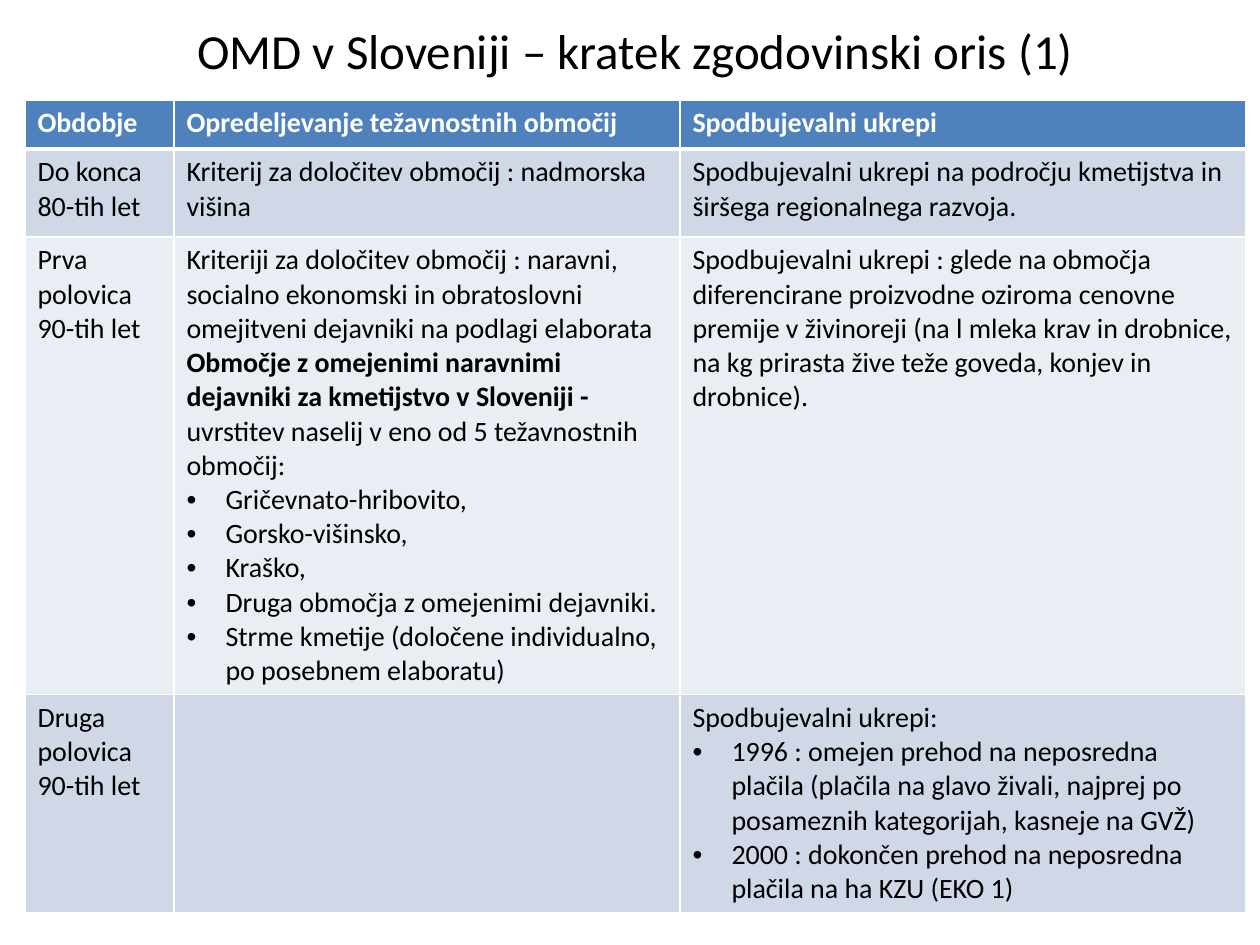
from dataclasses import dataclass

from lxml.etree import SubElement
from pptx import Presentation
from pptx.dml.color import RGBColor
from pptx.enum.text import MSO_ANCHOR, PP_ALIGN
from pptx.oxml import parse_xml
from pptx.oxml.ns import nsdecls, qn
from pptx.slide import Slide
from pptx.table import Table, _Cell
from pptx.util import Emu, Pt

PX_PER_INCH = 126
FONT = "Calibri"
BLACK = RGBColor(0x00, 0x00, 0x00)
WHITE = RGBColor(0xFF, 0xFF, 0xFF)
HEADER_BLUE = RGBColor(0x4F, 0x81, 0xBD)
BAND_DARK = RGBColor(0xD0, 0xD8, 0xE8)
BAND_LIGHT = RGBColor(0xE9, 0xED, 0xF4)

COLUMN_WIDTHS = (149, 506, 566)
BULLET_INDENT = 39


@dataclass(frozen=True)
class Span:
    text: str
    bold: bool = False


@dataclass(frozen=True)
class Para:
    spans: tuple[Span, ...]
    bullet: bool = False


@dataclass(frozen=True)
class Row:
    height: int
    fill: RGBColor
    cells: tuple[tuple[Para, ...], ...]
    color: RGBColor = BLACK
    top_border: int = 1
    bottom_border: int = 1


def px(length: int) -> Emu:
    return Emu(round(length * 914400 / PX_PER_INCH))


def plain(text: str, bold: bool = False) -> Para:
    return Para((Span(text, bold),))


def bullets(*texts: str) -> tuple[Para, ...]:
    return tuple(Para((Span(text),), bullet=True) for text in texts)


ROWS = (
    Row(
        49,
        HEADER_BLUE,
        tuple(
            (plain(heading, bold=True),)
            for heading in ("Obdobje", "Opredeljevanje težavnostnih območij", "Spodbujevalni ukrepi")
        ),
        color=WHITE,
        bottom_border=3,
    ),
    Row(
        88,
        BAND_DARK,
        (
            (plain("Do konca 80-tih let"),),
            (plain("Kriterij za določitev območij : nadmorska višina"),),
            (plain("Spodbujevalni ukrepi na področju kmetijstva in širšega regionalnega razvoja."),),
        ),
        top_border=3,
    ),
    Row(
        450,
        BAND_LIGHT,
        (
            (plain("Prva polovica 90-tih let"),),
            (
                Para((
                    Span("Kriteriji za določitev območij : naravni, socialno ekonomski in "
                         "obratoslovni omejitveni dejavniki na podlagi elaborata "),
                    Span("Območje z omejenimi naravnimi dejavniki za kmetijstvo v Sloveniji - ", bold=True),
                    Span("uvrstitev naselij v eno od 5 težavnostnih območij:"),
                )),
                *bullets(
                    "Gričevnato-hribovito,",
                    "Gorsko-višinsko,",
                    "Kraško,",
                    "Druga območja z omejenimi dejavniki.",
                    "Strme kmetije (določene individualno, po posebnem elaboratu)",
                ),
            ),
            (plain("Spodbujevalni ukrepi : glede na območja diferencirane proizvodne oziroma "
                   "cenovne premije v živinoreji (na l mleka krav in drobnice, na kg prirasta "
                   "žive teže goveda, konjev in drobnice)."),),
        ),
    ),
    Row(
        214,
        BAND_DARK,
        (
            (plain("Druga polovica 90-tih let"),),
            (),
            (
                plain("Spodbujevalni ukrepi:"),
                *bullets(
                    "1996 : omejen prehod na neposredna plačila (plačila na glavo živali, "
                    "najprej po posameznih kategorijah, kasneje na GVŽ)",
                    "2000 : dokončen prehod na neposredna plačila na ha KZU (EKO 1)",
                ),
            ),
        ),
    ),
)


def add_title(page: Slide, text: str) -> None:
    title = page.shapes.title
    title.left, title.top, title.width, title.height = px(68), px(0), px(1134), px(100)
    title.text_frame.text = text
    title.text_frame.vertical_anchor = MSO_ANCHOR.MIDDLE
    paragraph = title.text_frame.paragraphs[0]
    paragraph.alignment = PP_ALIGN.CENTER
    font = paragraph.runs[0].font
    font.name, font.size, font.color.rgb = FONT, Pt(28), BLACK


def set_borders(cell: _Cell, row: Row) -> None:
    properties = cell._tc.get_or_add_tcPr()
    widths = {"lnL": 1, "lnR": 1, "lnT": row.top_border, "lnB": row.bottom_border}
    for position, (side, width) in enumerate(widths.items()):
        border = parse_xml(
            f'<a:{side} {nsdecls("a")} w="{Pt(width)}"><a:solidFill>'
            f'<a:srgbClr val="{WHITE}"/></a:solidFill></a:{side}>'
        )
        properties.insert(position, border)


def write_cell(cell: _Cell, paras: tuple[Para, ...], color: RGBColor) -> None:
    frame = cell.text_frame
    for index, para in enumerate(paras):
        paragraph = frame.add_paragraph() if index else frame.paragraphs[0]
        if para.bullet:
            properties = paragraph._p.get_or_add_pPr()
            properties.set("marL", str(px(BULLET_INDENT)))
            properties.set("indent", str(-px(BULLET_INDENT)))
            SubElement(properties, qn("a:buFont"), typeface="Arial")
            SubElement(properties, qn("a:buChar"), char="•")
        for span in para.spans:
            run = paragraph.add_run()
            run.text = span.text
            font = run.font
            font.name, font.size, font.bold = FONT, Pt(16), span.bold
            font.color.rgb = color


def fill_row(table: Table, index: int, row: Row) -> None:
    table.rows[index].height = px(row.height)
    for column, paras in enumerate(row.cells):
        cell = table.cell(index, column)
        cell.fill.solid()
        cell.fill.fore_color.rgb = row.fill
        set_borders(cell, row)
        write_cell(cell, paras, row.color)


def add_history_table(page: Slide) -> None:
    height = sum(row.height for row in ROWS)
    table = page.shapes.add_table(
        len(ROWS), len(COLUMN_WIDTHS), px(25), px(100), px(sum(COLUMN_WIDTHS)), px(height)
    ).table
    for column, width in zip(table.columns, COLUMN_WIDTHS):
        column.width = px(width)
    for index, row in enumerate(ROWS):
        fill_row(table, index, row)


def main() -> None:
    deck = Presentation()
    deck.slide_width, deck.slide_height = px(1260), px(945)
    page = deck.slides.add_slide(deck.slide_layouts[5])
    add_title(page, "OMD v Sloveniji – kratek zgodovinski oris (1)")
    add_history_table(page)
    deck.save("out.pptx")


if __name__ == "__main__":
    main()
